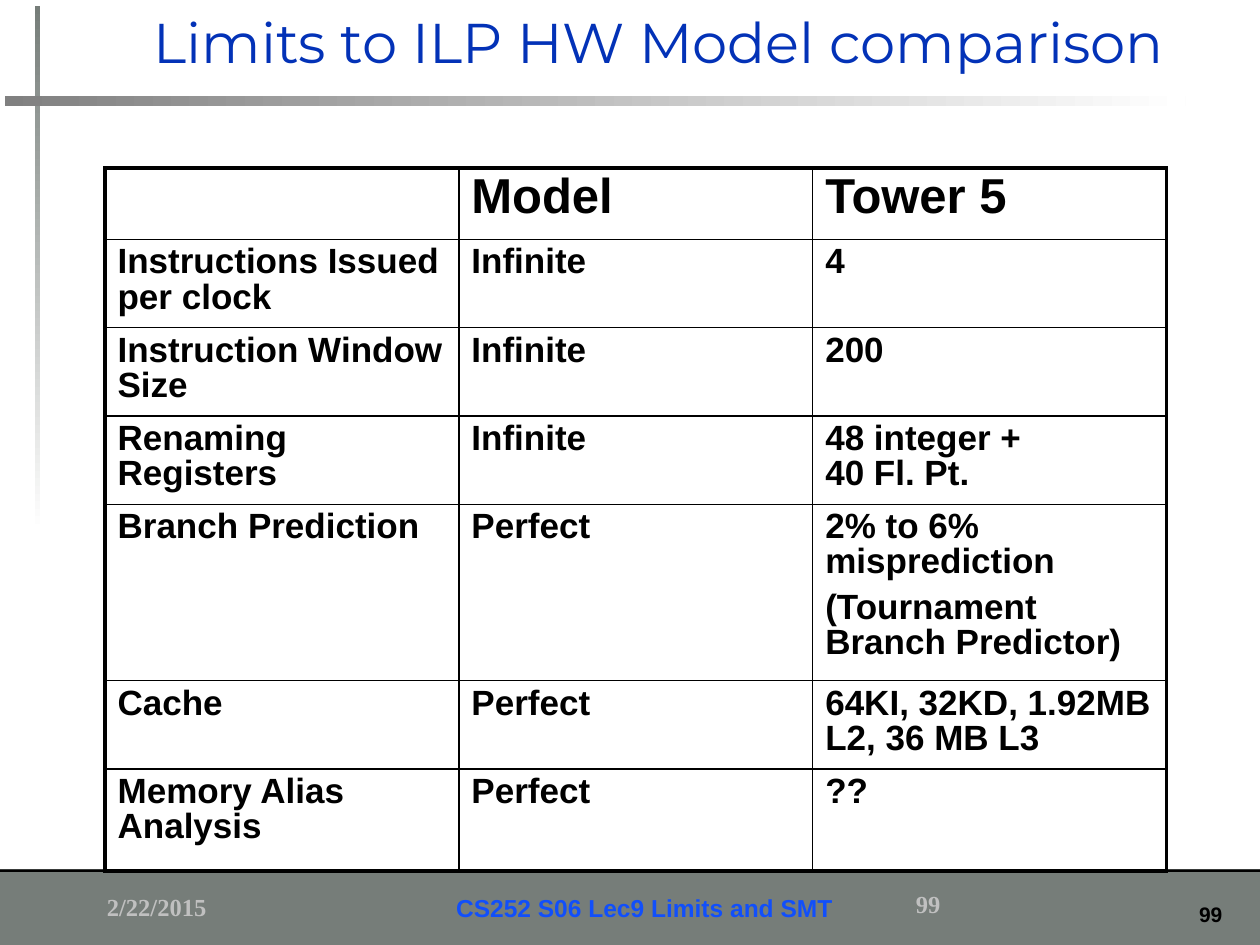
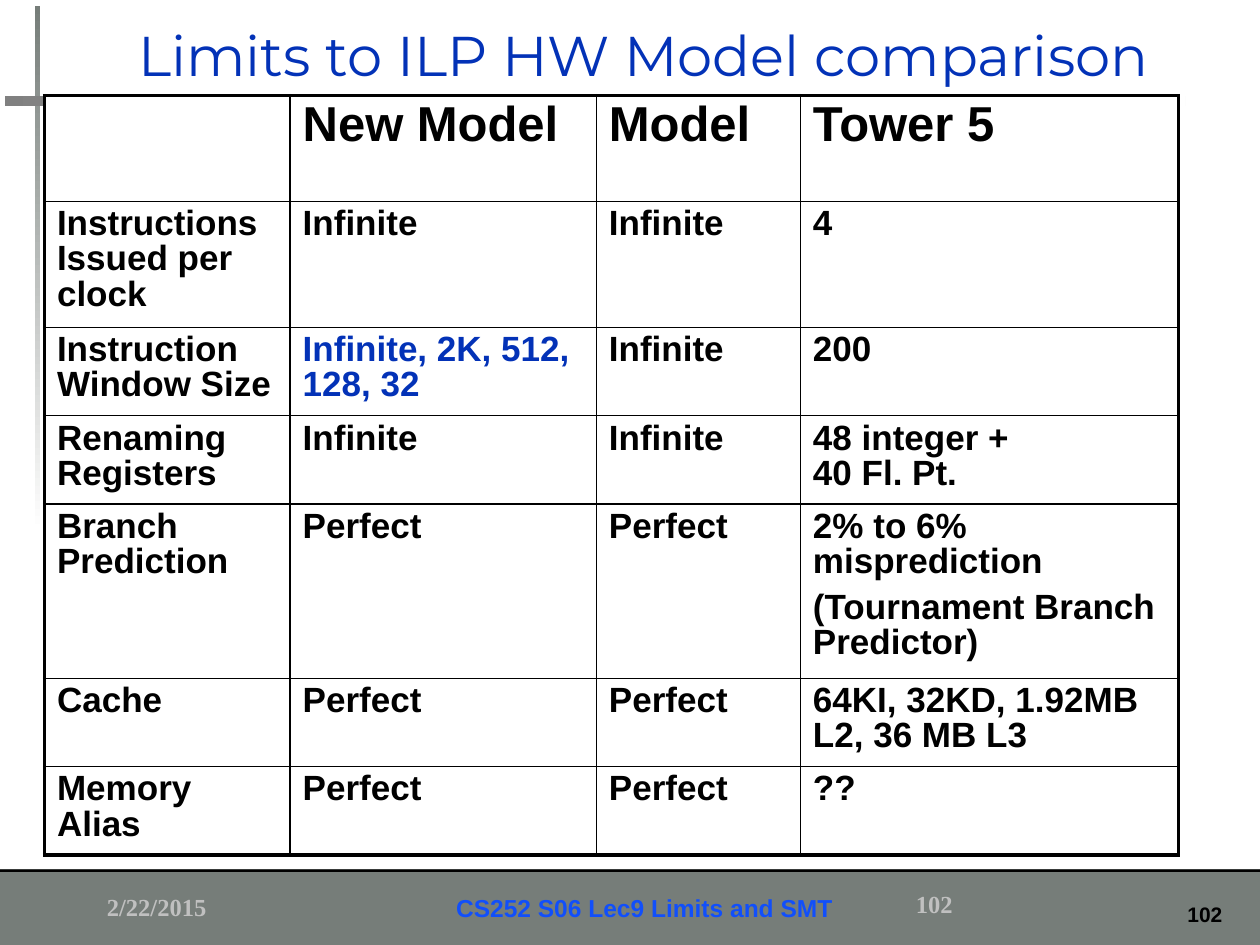
import pptx
import pptx.dml.color
import pptx.enum.shapes
import pptx.enum.text
import pptx.oxml
import pptx.oxml.ns
import pptx.util

Pt = pptx.util.Pt
ALIGN = pptx.enum.text.PP_ALIGN
ANCHOR = pptx.enum.text.MSO_ANCHOR

TITLE = "Limits to ILP HW Model comparison"
DATE = "2/22/2015"
COURSE = "CS252 S06 Lec9 Limits and SMT"

BLACK, WHITE, BAND = "000000", "FFFFFF", "767D79"
BLUE, COURSE_BLUE, SILVER, GRAY = "0332B7", "114FFB", "C0C0C0", "808080"

# Newlines separate paragraphs, \v breaks a line inside one.
PROCESSOR = ["Tower 5", "4", "200", "48 integer + \v40 Fl. Pt.",
             "2% to 6% misprediction\n(Tournament Branch Predictor)",
             "64KI, 32KD, 1.92MB L2, 36 MB L3", "??"]
LIMITS = ["Infinite"] * 3 + ["Perfect"] * 3
FEATURES = ["", "Instructions Issued per clock", "Instruction Window Size",
            "Renaming Registers", "Branch Prediction", "Cache"]
IDEAL = ["Model"] + LIMITS
NEW_MODEL = ["New Model"] + LIMITS
NEW_MODEL[2] = "Infinite, 2K, 512, 128, 32"

SLIDES = [
    {"number": "99",
     "title_box": (80.64, -7.92, 639.36, 67.68),
     "table_at": (60, 96),
     "columns": [FEATURES + ["Memory Alias Analysis"], IDEAL, PROCESSOR],
     "widths": [202.2] * 3,
     "heights": [37.5, 50.4, 50.4, 50.4, 100.8, 50.4, 58.3],
     "highlights": []},
    {"number": "102",
     "title_box": (72, 0, 639.36, 66.24),
     "table_at": (25.4, 54.6),
     "columns": [FEATURES + ["Memory Alias"], NEW_MODEL, IDEAL, PROCESSOR],
     "widths": [140.4, 175, 116.6, 216],
     "heights": [60.5, 72, 50.4, 50.4, 99.5, 50.4, 50.4],
     "highlights": [(2, 1)]},
]


def rgb(color):
    return pptx.dml.color.RGBColor.from_string(color)


def set_font(paragraph, size, color, name="Arial", bold=True):
    font = paragraph.font
    font.size, font.name, font.bold = Pt(size), name, bold
    font.color.rgb = rgb(color)


def add_text(slide, box, text, size, color, name="Arial", bold=True,
             align=ALIGN.LEFT, anchor=ANCHOR.TOP, spacing=None):
    frame = slide.shapes.add_textbox(*map(Pt, box)).text_frame
    frame.word_wrap = True
    frame.vertical_anchor = anchor
    frame.text = text
    paragraph = frame.paragraphs[0]
    paragraph.alignment = align
    paragraph.line_spacing = spacing
    set_font(paragraph, size, color, name, bold)


def add_bar(slide, box, color, fade_angle=None):
    """Draw a plain bar, or one that fades to white along fade_angle."""
    bar = slide.shapes.add_shape(
        pptx.enum.shapes.MSO_SHAPE.RECTANGLE, *map(Pt, box))
    bar.shadow.inherit = False
    bar.line.fill.background()
    if fade_angle is None:
        bar.fill.solid()
        bar.fill.fore_color.rgb = rgb(color)
        return
    bar.fill.gradient()
    bar.fill.gradient_angle = fade_angle
    for stop, stop_color in zip(bar.fill.gradient_stops, (color, WHITE)):
        stop.color.rgb = rgb(stop_color)


def add_frame(slide, number):
    """Draw the footer band, crossed bars and footer text."""
    add_bar(slide, (0, 496.8, 720, 43.2), BAND)
    add_bar(slide, (0, 496.8, 720, 1.44), BLACK)
    add_text(slide, (660.24, 511.92, 45.36, 21.6), number, 12, BLACK,
             align=ALIGN.RIGHT)
    add_bar(slide, (20.16, 3.6, 2.88, 300.24), BAND, 270)
    add_bar(slide, (2.88, 54.72, 674.64, 5.76), GRAY, 0)
    add_text(slide, (54, 506.16, 149.76, 22.32), DATE, 14, SILVER,
             "Times New Roman")
    add_text(slide, (82.08, 502.56, 572.4, 28.08), COURSE, 14, COURSE_BLUE,
             align=ALIGN.CENTER, anchor=ANCHOR.BOTTOM)
    add_text(slide, (516.24, 504.72, 149.76, 23.04), number, 14, SILVER,
             "Times New Roman")


def set_borders(cell, outer_sides):
    """Draw thin black borders, thicker on the outer edge of the table."""
    properties = cell._tc.get_or_add_tcPr()
    for side, is_outer in zip("LRTB", outer_sides):
        width = Pt(2.25 if is_outer else 1)
        properties.append(pptx.oxml.parse_xml(
            f'<a:ln{side} {pptx.oxml.ns.nsdecls("a")} w="{width}">'
            f'<a:solidFill><a:srgbClr val="{BLACK}"/></a:solidFill>'
            f'</a:ln{side}>'))


def add_comparison(slide, content):
    columns, widths, heights = (
        content[key] for key in ("columns", "widths", "heights"))
    left, top = content["table_at"]
    size = (left, top, sum(widths), sum(heights))
    table = slide.shapes.add_table(
        len(heights), len(widths), *map(Pt, size)).table
    table.first_row = table.horz_banding = False
    for column, width in zip(table.columns, widths):
        column.width = Pt(width)
    for row, height in zip(table.rows, heights):
        row.height = Pt(height)
    for c, texts in enumerate(columns):
        for r, text in enumerate(texts):
            cell = table.cell(r, c)
            set_borders(cell, (c == 0, c == len(columns) - 1,
                               r == 0, r == len(texts) - 1))
            cell.fill.solid()
            cell.fill.fore_color.rgb = rgb(WHITE)
            cell.text_frame.text = text
            color = BLUE if (r, c) in content["highlights"] else BLACK
            for i, paragraph in enumerate(cell.text_frame.paragraphs):
                paragraph.line_spacing = 0.9
                if i:
                    paragraph.space_before = Pt(6)
                set_font(paragraph, 20 if r else 28, color)


def main():
    deck = pptx.Presentation()
    deck.slide_width, deck.slide_height = Pt(720), Pt(540)
    for content in SLIDES:
        slide = deck.slides.add_slide(deck.slide_layouts[6])
        add_frame(slide, content["number"])
        add_comparison(slide, content)
        add_text(slide, content["title_box"], TITLE, 32, BLUE, "Montserrat",
                 bold=False, anchor=ANCHOR.MIDDLE, spacing=0.9)
    deck.save("out.pptx")


if __name__ == "__main__":
    main()
